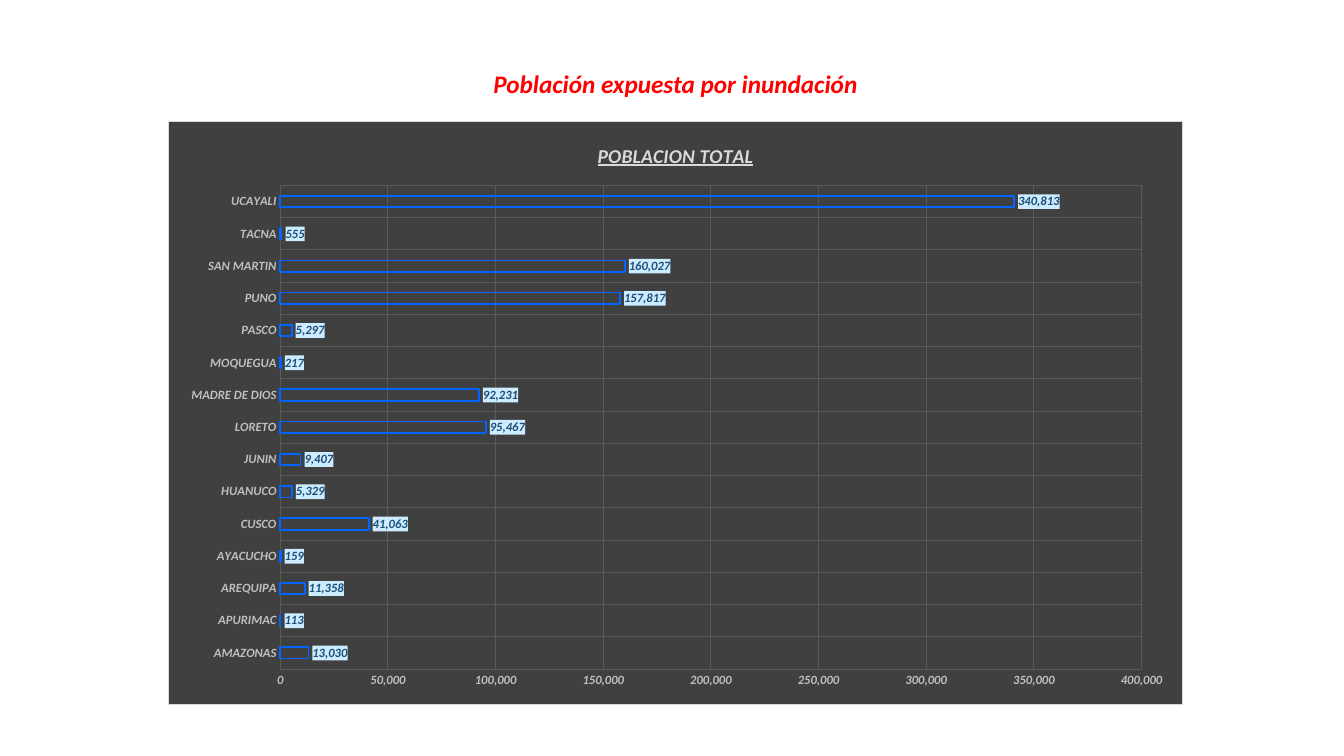
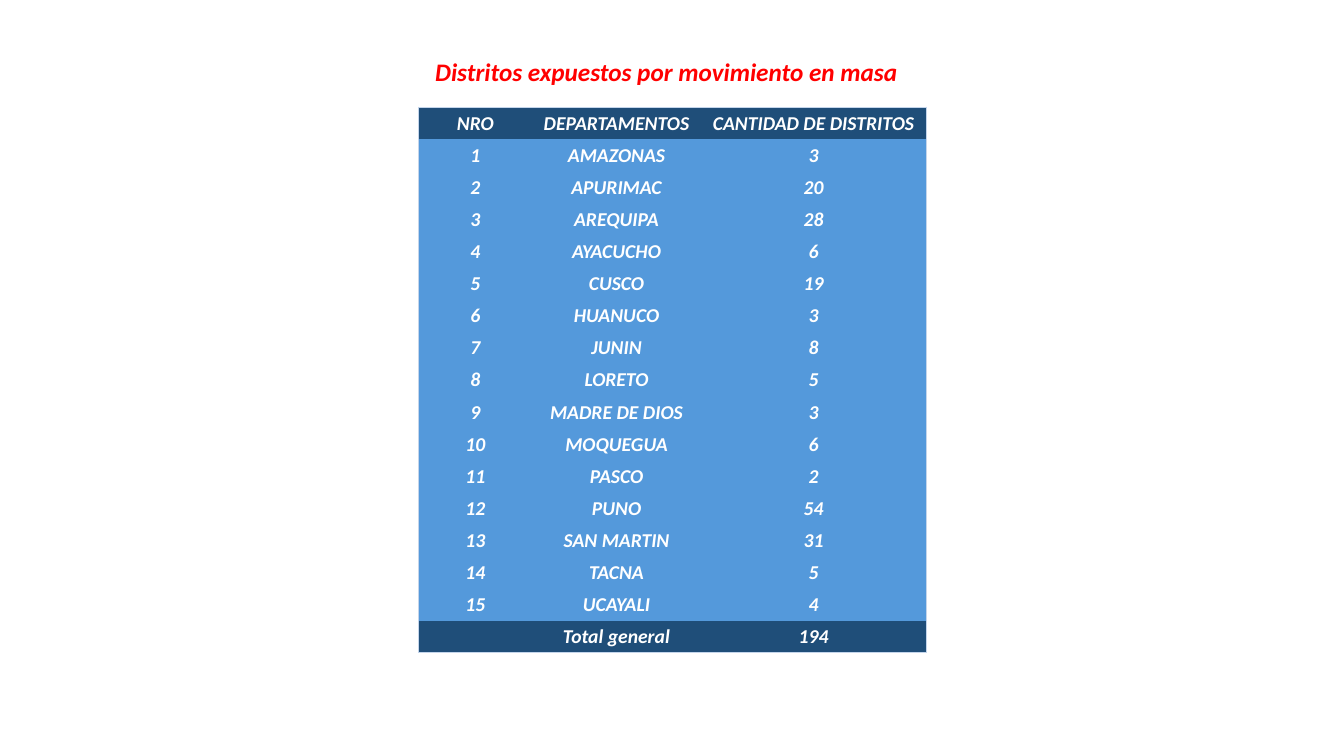
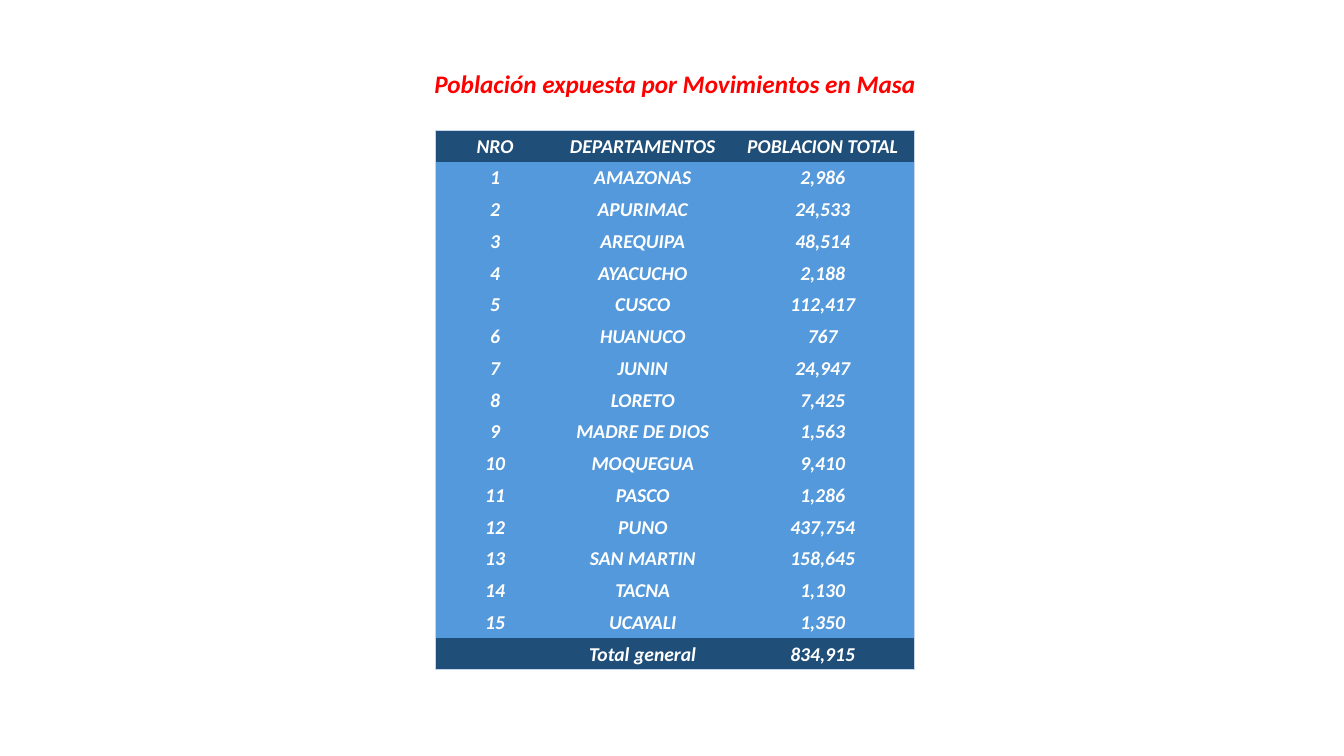
import dataclasses
import typing

import lxml.etree
import pptx
import pptx.chart.data
import pptx.dml.color
import pptx.enum.chart
import pptx.enum.dml
import pptx.enum.text
import pptx.oxml
import pptx.oxml.ns
import pptx.util

Inches = pptx.util.Inches
Pt = pptx.util.Pt
qn = pptx.oxml.ns.qn

# Shared style
FONT = "Calibri"
RED, WHITE = "FF0000", "FFFFFF"
NAVY, SKY, TABLE_EDGE = "1F4E79", "5499DB", "C4D5EB"
CHARCOAL, GRID, CHART_EDGE = "404040", "595959", "D9D9D9"
AXIS_TEXT, BAR_LINE, LABEL_FILL = "BFBFBF", "0066FF", "CCECFF"

DEPARTMENTS = [
    "AMAZONAS", "APURIMAC", "AREQUIPA", "AYACUCHO", "CUSCO",
    "HUANUCO", "JUNIN", "LORETO", "MADRE DE DIOS", "MOQUEGUA",
    "PASCO", "PUNO", "SAN MARTIN", "TACNA", "UCAYALI",
]
FLOODED_POPULATION = [
    13030, 113, 11358, 159, 41063, 5329, 9407, 95467,
    92231, 217, 5297, 157817, 160027, 555, 340813,
]


@dataclasses.dataclass
class Title:
    text: str
    left: float
    top: float
    width: float


@dataclasses.dataclass
class DepartmentTable:
    title: Title
    heading: str
    counts: list[int]
    total: int
    left: float
    top: float
    height: float
    columns: list[float]


TABLES = [
    DepartmentTable(
        Title("Distritos expuestos por movimiento en masa", 4.16, 0.51, 4.9),
        "CANTIDAD DE DISTRITOS",
        [3, 20, 28, 6, 19, 3, 8, 5, 3, 6, 2, 54, 31, 5, 4],
        194, 4.15, 1.06, 5.42, [1.13, 1.67, 2.24],
    ),
    DepartmentTable(
        Title("Población expuesta por Movimientos en Masa", 4.18, 0.63, 5.03),
        "POBLACION TOTAL",
        [2986, 24533, 48514, 2188, 112417, 767, 24947, 7425,
         1563, 9410, 1286, 437754, 158645, 1130, 1350],
        834915, 4.32, 1.29, 5.36, [1.18, 1.75, 1.82],
    ),
]


def rgb(code: str) -> pptx.dml.color.RGBColor:
    return pptx.dml.color.RGBColor.from_string(code)


def set_font(font: typing.Any, size: float, color: str) -> None:
    font.name, font.size = FONT, Pt(size)
    font.bold = font.italic = True
    font.color.rgb = rgb(color)


def add_title(slide: typing.Any, title: Title) -> None:
    box = slide.shapes.add_textbox(
        Inches(title.left), Inches(title.top), Inches(title.width), Inches(0.4))
    frame = box.text_frame
    frame.word_wrap = False
    frame.auto_size = pptx.enum.text.MSO_AUTO_SIZE.SHAPE_TO_FIT_TEXT
    paragraph = frame.paragraphs[0]
    paragraph.text = title.text
    paragraph.alignment = pptx.enum.text.PP_ALIGN.CENTER
    set_font(paragraph.font, 18, RED)


# Chart
def chart_box_style(fill: str, edge: str | None = None) -> typing.Any:
    line = (f'<a:ln w="9525"><a:solidFill><a:srgbClr val="{edge}"/></a:solidFill></a:ln>'
            if edge else "<a:ln><a:noFill/></a:ln>")
    return pptx.oxml.parse_xml(
        f'<c:spPr {pptx.oxml.ns.nsdecls("c", "a")}><a:solidFill>'
        f'<a:srgbClr val="{fill}"/></a:solidFill>{line}</c:spPr>')


def place_plot(chart: typing.Any, **fractions: float) -> None:
    plot_area = chart.plots[0]._element.getparent()
    for old in plot_area.findall(qn("c:layout")):
        plot_area.remove(old)
    layout = lxml.etree.Element(qn("c:layout"))
    manual = lxml.etree.SubElement(layout, qn("c:manualLayout"))
    settings = {"layoutTarget": "inner", "xMode": "edge", "yMode": "edge", **fractions}
    for tag, value in settings.items():
        lxml.etree.SubElement(manual, qn(f"c:{tag}")).set("val", str(value))
    plot_area.insert(0, layout)


def style_axis(axis: typing.Any) -> None:
    axis.major_tick_mark = axis.minor_tick_mark = pptx.enum.chart.XL_TICK_MARK.NONE
    axis.format.line.fill.background()
    axis.has_major_gridlines = True
    grid_line = axis.major_gridlines.format.line
    grid_line.color.rgb, grid_line.width = rgb(GRID), Pt(0.75)
    set_font(axis.tick_labels.font, 9, AXIS_TEXT)


def add_population_chart(slide: typing.Any) -> None:
    data = pptx.chart.data.CategoryChartData(number_format="#,##0")
    data.categories = DEPARTMENTS
    data.add_series("POBLACION TOTAL", FLOODED_POPULATION)
    chart = slide.shapes.add_chart(
        pptx.enum.chart.XL_CHART_TYPE.BAR_CLUSTERED,
        Inches(1.67), Inches(1.2), Inches(10.06), Inches(5.79), data).chart
    chart.font.name, chart.font.size = FONT, Pt(10)
    chart.has_legend = False
    chart._chartSpace.find(qn("c:chart")).addnext(chart_box_style(CHARCOAL, CHART_EDGE))

    chart.has_title = True
    heading = chart.chart_title.text_frame.paragraphs[0]
    heading.text = "POBLACION TOTAL"
    set_font(heading.font, 14, CHART_EDGE)
    heading.font.underline = True

    for axis in (chart.category_axis, chart.value_axis):
        style_axis(axis)
    values = chart.value_axis
    values.minimum_scale, values.maximum_scale, values.major_unit = 0, 400000, 50000
    values.tick_labels.number_format = "#,##0"
    values.tick_labels.number_format_is_linked = False
    place_plot(chart, x=0.11, y=0.11, w=0.85, h=0.83)

    plot = chart.plots[0]
    plot.gap_width, plot.overlap, plot.vary_by_categories = 182, -50, False
    bars = plot.series[0].format
    bars.fill.background()
    bars.line.color.rgb, bars.line.width = rgb(BAR_LINE), Pt(1.25)

    plot.has_data_labels = True
    labels = plot.data_labels
    labels.show_value = True
    labels.position = pptx.enum.chart.XL_LABEL_POSITION.OUTSIDE_END
    labels.number_format, labels.number_format_is_linked = "#,##0", False
    set_font(labels.font, 9, NAVY)
    labels._element.find(qn("c:txPr")).addprevious(chart_box_style(LABEL_FILL))


# Tables
def set_borders(cell: typing.Any, edges: dict[str, bool]) -> None:
    properties = cell._tc.get_or_add_tcPr()
    for side, visible in edges.items():
        line = lxml.etree.SubElement(properties, qn(f"a:ln{side}"))
        if visible:
            line.set("w", str(Pt(0.5)))
            fill = lxml.etree.SubElement(line, qn("a:solidFill"))
            lxml.etree.SubElement(fill, qn("a:srgbClr")).set("val", TABLE_EDGE)
        else:
            lxml.etree.SubElement(line, qn("a:noFill"))


def fill_cell(cell: typing.Any, text: str, color: str) -> None:
    cell.fill.solid()
    cell.fill.fore_color.rgb = rgb(color)
    cell.vertical_anchor = pptx.enum.text.MSO_ANCHOR.MIDDLE
    cell.margin_left = cell.margin_right = cell.margin_top = Inches(0.01)
    cell.margin_bottom = 0
    paragraph = cell.text_frame.paragraphs[0]
    paragraph.text = text
    paragraph.alignment = pptx.enum.text.PP_ALIGN.CENTER
    set_font(paragraph.font, 14, WHITE)


def add_department_table(slide: typing.Any, content: DepartmentTable) -> None:
    body = [(str(number), name, f"{count:,}") for number, (name, count)
            in enumerate(zip(DEPARTMENTS, content.counts), start=1)]
    rows = [("NRO", "DEPARTAMENTOS", content.heading), *body,
            ("", "Total general", f"{content.total:,}")]
    last_row, last_column = len(rows) - 1, len(content.columns) - 1
    table = slide.shapes.add_table(
        len(rows), len(content.columns), Inches(content.left), Inches(content.top),
        Inches(sum(content.columns)), Inches(content.height)).table
    for column, width in zip(table.columns, content.columns):
        column.width = Inches(width)
    for r, texts in enumerate(rows):
        for c, text in enumerate(texts):
            cell = table.cell(r, c)
            set_borders(cell, {"L": c == 0, "R": c == last_column,
                               "T": r == 0, "B": r == last_row})
            fill_cell(cell, text, NAVY if r in (0, last_row) else SKY)


def main() -> None:
    deck = pptx.Presentation()
    deck.slide_width, deck.slide_height = Inches(13.33), Inches(7.5)
    blank = deck.slide_layouts[6]

    # Flood exposure
    flood_slide = deck.slides.add_slide(blank)
    add_title(flood_slide, Title("Población expuesta por inundación", 4.77, 0.63, 3.86))
    add_population_chart(flood_slide)

    # Mass movement exposure
    for content in TABLES:
        slide = deck.slides.add_slide(blank)
        add_title(slide, content.title)
        add_department_table(slide, content)

    deck.save("out.pptx")


if __name__ == "__main__":
    main()
